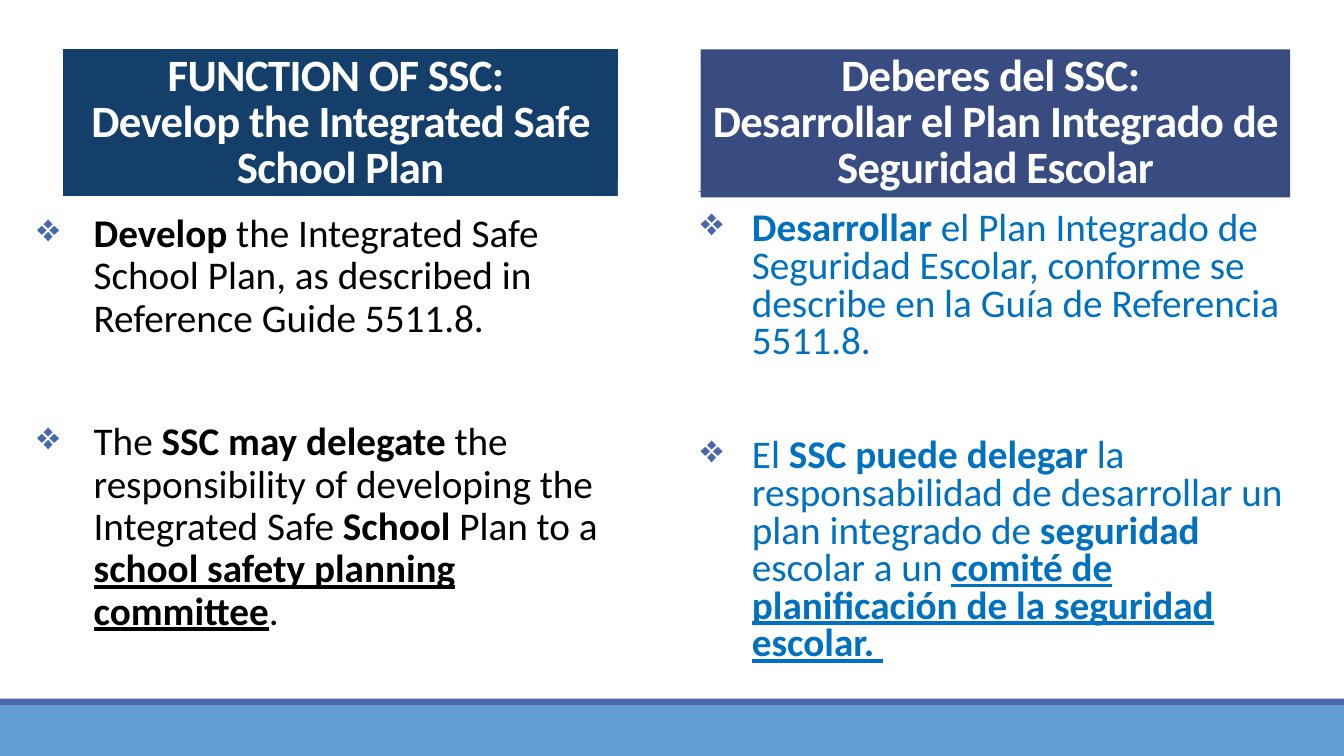
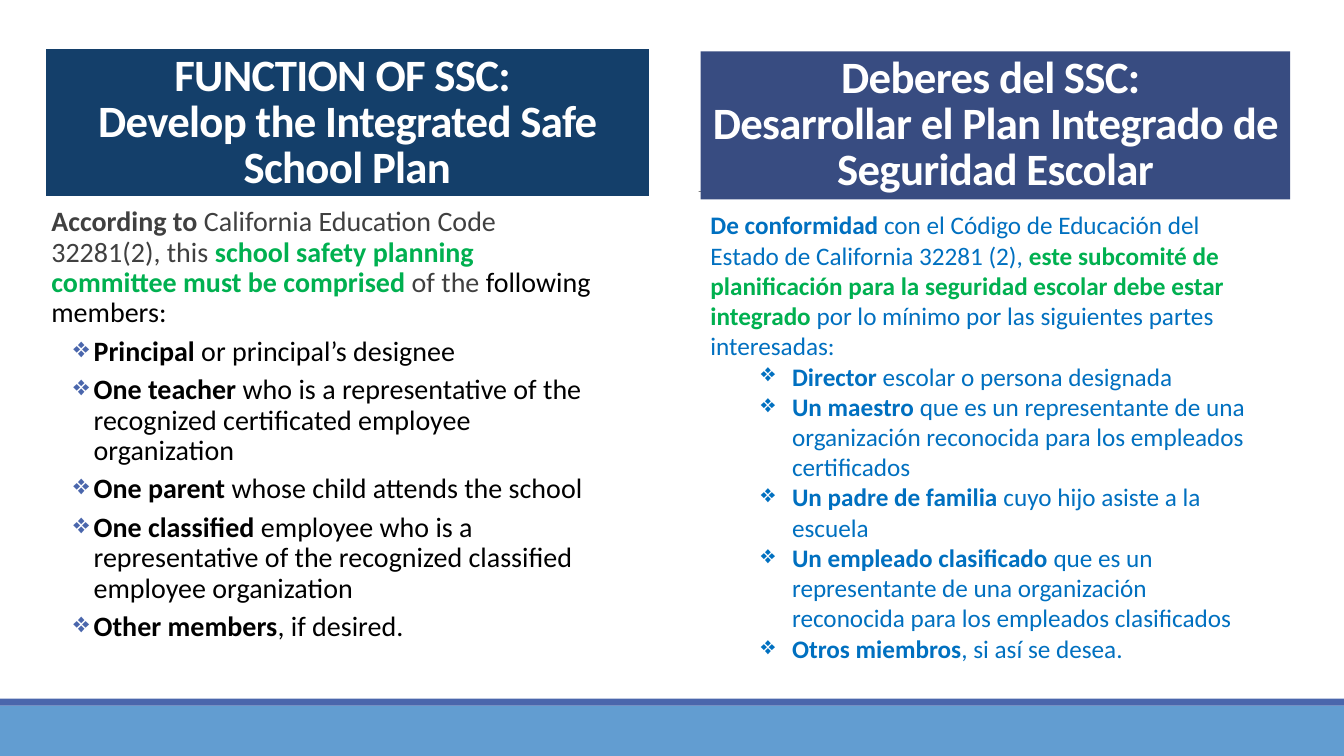
from lxml import etree
from pptx import Presentation
from pptx.dml.color import RGBColor
from pptx.enum.shapes import MSO_CONNECTOR, MSO_SHAPE
from pptx.enum.text import MSO_ANCHOR, PP_ALIGN
from pptx.oxml.ns import qn
from pptx.util import Pt

RECT = MSO_SHAPE.RECTANGLE
STRAIGHT = MSO_CONNECTOR.STRAIGHT
BOTTOM = MSO_ANCHOR.BOTTOM
CENTER = PP_ALIGN.CENTER

FONT = "Calibri"
WHITE, BLACK, GRAY = "FFFFFF", "000000", "404040"
NAVY, INDIGO = "143F6A", "384C81"
BAND, ACCENT = "629DD1", "4A66AC"
BLUE, GREEN = "0070C0", "00B050"
RULE = "808080"

HEADING_EN = "FUNCTION OF SSC: \nDevelop the Integrated Safe School Plan"
HEADING_ES = "Deberes del SSC: \nDesarrollar el Plan Integrado de Seguridad Escolar"

# Runs are (text, style, optional colour): "b" is bold, "u" is underlined.
PLAN_EN = [
    [("Develop", "b"),
     (" the Integrated Safe School Plan, as described in Reference Guide 5511.8.", "")],
    [("The ", ""), ("SSC may delegate ", "b"),
     ("the responsibility of developing the Integrated Safe ", ""),
     ("School", "b"), (" Plan to a ", ""),
     ("school safety planning committee", "bu"), (".", "")],
]
PLAN_ES = [
    [("Desarrollar", "b"),
     (" el Plan Integrado de Seguridad Escolar, conforme se describe en la "
      "Guía de Referencia 5511.8.", "")],
    [("El ", ""), ("SSC puede delegar ", "b"),
     ("la responsabilidad de desarrollar un plan integrado de ", ""),
     ("seguridad ", "b"), ("escolar a un ", ""),
     ("comité de planificación de la seguridad escolar. ", "bu")],
]
INTRO_EN = [
    ("According to ", "b", GRAY),
    ("California Education Code 32281(2), this ", "", GRAY),
    ("school safety planning committee must be comprised ", "b", GREEN),
    ("of the ", "", GRAY), ("following members:", ""),
]
MEMBERS_EN = [
    [("Principal ", "b"), ("or principal’s designee", "")],
    [("One teacher ", "b"),
     ("who is a representative of the recognized certificated employee organization", "")],
    [("One parent ", "b"), ("whose child attends the school", "")],
    [("One classified ", "b"),
     ("employee who is a representative of the recognized classified employee "
      "organization", "")],
    [("Other members", "b"), (", if desired.", "")],
]
INTRO_ES = [
    ("De conformidad ", "b"),
    ("con el Código de Educación del Estado de California 32281 (2), ", ""),
    ("este subcomité de planificación para la seguridad escolar debe estar integrado",
     "b", GREEN),
    (" por lo mínimo por las siguientes partes interesadas:", ""),
]
MEMBERS_ES = [
    [("Director", "b"), (" escolar o persona designada", "")],
    [("Un maestro ", "b"),
     ("que es un representante de una organización reconocida para los empleados "
      "certificados", "")],
    [("Un padre de familia ", "b"), ("cuyo hijo asiste a la escuela", "")],
    [("Un empleado clasificado ", "b"),
     ("que es un representante de una organización reconocida para los empleados "
      "clasificados", "")],
    [("Otros miembros", "b"), (", si así se desea.", "")],
]

# Boxes are (left, top, width, height); indent is (left margin, hanging width).
SLIDES = [
    dict(
        headings=[(HEADING_EN, (43.9, 33.8, 398.9, 107.3), NAVY),
                  (HEADING_ES, (500.4, 35.3, 421.2, 105.8), INDIGO)],
        mask=(441.4, 127.4, 57.6, 36.7),
        bodies=[
            dict(box=(26.6, 149, 416.9, 327.6), inset=0, intro=None, items=PLAN_EN,
                 size=28, color=BLACK, bullet=ACCENT, indent=(40.3, 40.3),
                 line=0.9, before=56, after=2),
            dict(box=(500.4, 147.6, 433.4, 337.7), inset=0, intro=None, items=PLAN_ES,
                 size=28, color=BLUE, bullet=ACCENT, indent=(36.7, 36.7),
                 line=0.8, before=52.5, after=2),
        ],
    ),
    dict(
        headings=[(HEADING_EN, (31.7, 33.8, 432.7, 107.3), NAVY),
                  (HEADING_ES, (500.4, 36.7, 421.2, 105.8), INDIGO)],
        mask=(463.7, 127.4, 35.3, 37.4),
        bodies=[
            dict(box=(36.7, 144.7, 388.8, 339.8), inset=0, intro=INTRO_EN,
                 items=MEMBERS_EN, size=20, color=BLACK, bullet=ACCENT,
                 indent=(30.2, 14.4), line=0.9, before=2, after=4),
            dict(box=(500.4, 146.2, 406.1, 334.1), inset=7.2, intro=INTRO_ES,
                 items=MEMBERS_ES, size=18, color=BLUE, bullet=BLUE,
                 indent=(58.3, 22.3), line=1.0, before=0, after=0),
        ],
    ),
]


def rgb(value):
    return RGBColor.from_string(value)


def add_rect(slide, box, fill):
    sp = slide.shapes.add_shape(RECT, *map(Pt, box))
    sp.shadow.inherit = False
    sp.fill.solid()
    sp.fill.fore_color.rgb = rgb(fill)
    sp.line.fill.background()
    return sp


prs = Presentation()
prs.slide_width, prs.slide_height = Pt(960), Pt(540)

for content in SLIDES:
    s = prs.slides.add_slide(prs.slide_layouts[6])

    # Footer bands and the rule under the headings
    add_rect(s, (0, 504, 960, 36), BAND)
    add_rect(s, (0, 499, 960, 5), ACCENT)
    rule = s.shapes.add_connector(STRAIGHT, Pt(94.3), Pt(136.8), Pt(879.1), Pt(136.8))
    rule.line.color.rgb = rgb(RULE)
    rule.line.width = Pt(0.5)
    etree.SubElement(rule._element.spPr, qn("a:effectLst"))

    # Body columns
    for body in content["bodies"]:
        tf = s.shapes.add_textbox(*map(Pt, body["box"])).text_frame
        tf.word_wrap = True
        tf.margin_left = tf.margin_right = Pt(body["inset"])
        tf.margin_top = tf.margin_bottom = Pt(3.6)
        intro = [body["intro"]] if body["intro"] else []
        for i, runs in enumerate(intro + body["items"]):
            p = tf.paragraphs[0] if i == 0 else tf.add_paragraph()
            if runs is not body["intro"]:
                margin, hang = body["indent"]
                pPr = p._p.get_or_add_pPr()
                pPr.set("marL", str(Pt(margin)))
                pPr.set("indent", str(-Pt(hang)))
                color = etree.SubElement(pPr, qn("a:buClr"))
                etree.SubElement(color, qn("a:srgbClr"), val=body["bullet"])
                etree.SubElement(pPr, qn("a:buChar"), char="❖")
            p.line_spacing = body["line"]
            p.space_before = Pt(body["before"] if i else 0)
            p.space_after = Pt(body["after"])
            for text, style, *color in runs:
                r = p.add_run()
                r.text = text
                r.font.name = FONT
                r.font.size = Pt(body["size"])
                r.font.bold = "b" in style
                r.font.underline = "u" in style
                r.font.color.rgb = rgb(color[0] if color else body["color"])

    # Headings
    for text, box, fill in content["headings"]:
        sp = add_rect(s, box, fill)
        if fill == NAVY:
            sp.line.color.rgb = rgb(WHITE)
            sp.line.width = Pt(2.25)
        tf = sp.text_frame
        tf.word_wrap = True
        tf.vertical_anchor = BOTTOM
        tf.text = text
        for p in tf.paragraphs:
            p.alignment = CENTER
            p.line_spacing = 0.85
            for r in p.runs:
                r.font.name = FONT
                r.font.size = Pt(32)
                r.font.bold = True
                r.font.color.rgb = rgb(WHITE)
                r._r.get_or_add_rPr().set("spc", "-50")

    # Cover the rule between the two headings
    add_rect(s, content["mask"], WHITE)

prs.save("out.pptx")
